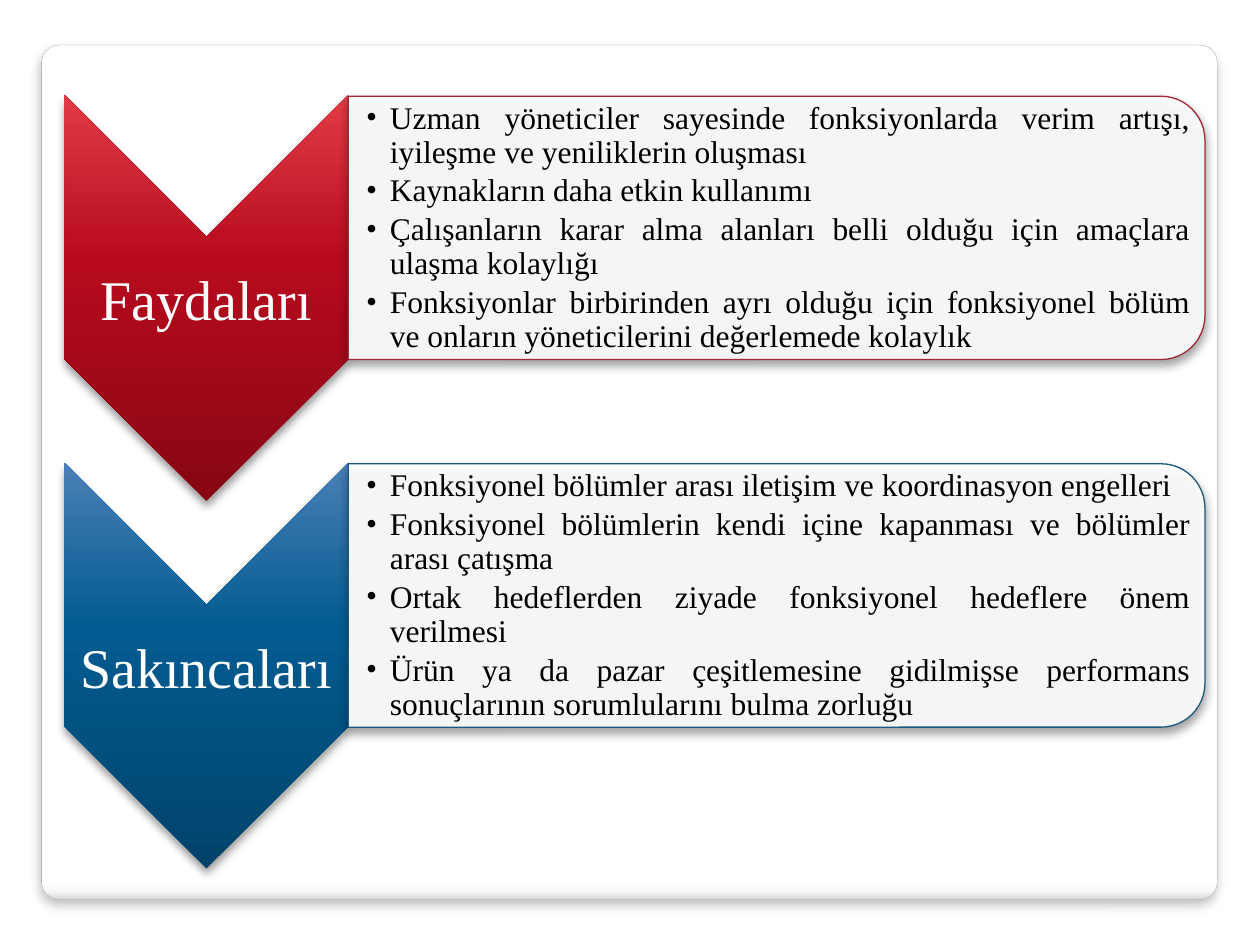
from dataclasses import dataclass

from lxml.etree import SubElement
from pptx import Presentation
from pptx.dml.color import RGBColor
from pptx.enum.shapes import MSO_SHAPE as Preset
from pptx.enum.text import MSO_ANCHOR as Anchor, PP_ALIGN as Align
from pptx.oxml.ns import qn
from pptx.util import Cm, Pt

FONT = "Times New Roman"
PITCH = 7.41


@dataclass(frozen=True)
class Area:
    left: float
    top: float
    width: float
    height: float

    def lowered(self, dy: float) -> "Area":
        return Area(self.left, self.top + dy, self.width, self.height)

    def turned(self) -> "Area":
        shift = (self.width - self.height) / 2
        return Area(self.left + shift, self.top - shift, self.height, self.width)

    def lengths(self) -> list:
        return [Cm(v) for v in (self.left, self.top, self.width, self.height)]


@dataclass(frozen=True)
class Shadow:
    opacity: int
    blur: float
    distance: float


@dataclass(frozen=True)
class Section:
    title: str
    points: tuple
    shades: tuple
    outline: str


FRAME = Area(0.84, 0.91, 23.7, 17.22)
CHEVRON = Area(1.3, 1.92, 5.72, 8.18)
TITLE = Area(1.3, 4.78, 5.72, 2.46)
PANEL = Area(7.02, 1.94, 17.27, 5.31)
POINTS = Area(7.02, 2.2, 17.01, 4.8)
SOFT = Shadow(25, 6, 4)
CRISP = Shadow(40, 5.2, 3)

SECTIONS = (
    Section("Faydaları", (
        "Uzman yöneticiler sayesinde fonksiyonlarda verim artışı, iyileşme ve yeniliklerin oluşması",
        "Kaynakların daha etkin kullanımı",
        "Çalışanların karar alma alanları belli olduğu için amaçlara ulaşma kolaylığı",
        "Fonksiyonlar birbirinden ayrı olduğu için fonksiyonel bölüm ve onların "
        "yöneticilerini değerlemede kolaylık",
    ), ((0, "870614"), (60, "B80B1E"), (100, "E13C45")), "9F2936"),
    Section("Sakıncaları", (
        "Fonksiyonel bölümler arası iletişim ve koordinasyon engelleri",
        "Fonksiyonel bölümlerin kendi içine kapanması ve bölümler arası çatışma",
        "Ortak hedeflerden ziyade fonksiyonel hedeflere önem verilmesi",
        "Ürün ya da pazar çeşitlemesine gidilmişse performans sonuçlarının "
        "sorumlularını bulma zorluğu",
    ), ((0, "00436A"), (60, "035C91"), (100, "4A80B7")), "1B587C"),
)


def rgb(code: str) -> RGBColor:
    return RGBColor.from_string(code)


def add_alpha(color, percent: int) -> None:
    SubElement(color, qn("a:alpha"), val=str(percent * 1000))


def fill_gradient(shape, stops: tuple, angle: int) -> None:
    shape.fill.gradient()
    gradient = shape._element.spPr.find(qn("a:gradFill"))
    gradient.set("rotWithShape", "0")
    for child in list(gradient):
        gradient.remove(child)
    stop_list = SubElement(gradient, qn("a:gsLst"))
    for position, code in stops:
        stop = SubElement(stop_list, qn("a:gs"), pos=str(position * 1000))
        SubElement(stop, qn("a:srgbClr"), val=code)
    SubElement(gradient, qn("a:lin"), ang=str(angle * 60000), scaled="0")


def add_block(slide, preset, area: Area, shadow: Shadow, *, stops: tuple = (), angle: int = 90,
              fill: str = "FFFFFF", opacity: int = 100, outline: str = "",
              weight: float = 0.75, turned: bool = False):
    """Draw a shape over the area it visibly covers, optionally turned by 90 degrees."""
    block = slide.shapes.add_shape(preset, *(area.turned() if turned else area).lengths())
    block.rotation = 90 if turned else 0
    if stops:
        fill_gradient(block, stops, angle)
    else:
        block.fill.solid()
        block.fill.fore_color.rgb = rgb(fill)
        add_alpha(block._element.spPr.find(qn("a:solidFill"))[0], opacity)
    if outline:
        block.line.color.rgb = rgb(outline)
        block.line.width = Pt(weight)
    else:
        block.line.fill.background()
    block.shadow.inherit = False
    outer = SubElement(block._element.spPr.find(qn("a:effectLst")), qn("a:outerShdw"),
                       blurRad=str(Pt(shadow.blur)), dist=str(Pt(shadow.distance)),
                       dir="5400000", rotWithShape="0")
    add_alpha(SubElement(outer, qn("a:srgbClr"), val="000000"), shadow.opacity)
    return block


def add_text(slide, area: Area, lines: tuple, *, size: float, color: str, align,
             margin: float = 0.05, left_margin: float = 0.05, spacing: float = 1.0,
             gap: float = 0, bullet: str = "", indent: float = 0) -> None:
    frame = slide.shapes.add_textbox(*area.lengths()).text_frame
    frame.word_wrap = True
    frame.vertical_anchor = Anchor.MIDDLE
    frame.margin_left = Cm(left_margin)
    frame.margin_top = frame.margin_right = frame.margin_bottom = Cm(margin)
    for index, line in enumerate(lines):
        paragraph = frame.paragraphs[0] if index == 0 else frame.add_paragraph()
        paragraph.alignment = align
        paragraph.line_spacing = spacing
        paragraph.space_after = Pt(gap)
        if bullet:
            properties = paragraph._p.get_or_add_pPr()
            properties.set("marL", str(Cm(indent)))
            properties.set("indent", str(-Cm(indent)))
            SubElement(properties, qn("a:buFont"), typeface=FONT)
            SubElement(properties, qn("a:buChar"), char=bullet)
        run = paragraph.add_run()
        run.text = line
        run.font.name, run.font.size = FONT, Pt(size)
        run.font.color.rgb = rgb(color)


def add_section(slide, section: Section, drop: float) -> None:
    add_block(slide, Preset.CHEVRON, CHEVRON.lowered(drop), CRISP, stops=section.shades,
              angle=270, turned=True)
    add_text(slide, TITLE.lowered(drop), (section.title,), size=32, color="FFFFFF",
             align=Align.CENTER)
    add_block(slide, Preset.ROUND_2_SAME_RECTANGLE, PANEL.lowered(drop), CRISP, opacity=90,
              outline=section.outline, turned=True)
    add_text(slide, POINTS.lowered(drop), section.points, size=18, color="000000",
             align=Align.JUSTIFY, margin=0.03, left_margin=0.36, spacing=0.9, gap=2.7,
             bullet="•", indent=0.48)


def main() -> None:
    deck = Presentation()
    deck.slide_width, deck.slide_height = Cm(25.4), Cm(19.05)
    slide = deck.slides.add_slide(deck.slide_layouts[6])
    frame = add_block(slide, Preset.ROUNDED_RECTANGLE, FRAME, SOFT, outline="A4A4A4", weight=0.16,
                      stops=((0, "FFFFFF"), (98, "FFFFFF"), (99, "F7F7F7"), (100, "DADADA")))
    frame.adjustments[0] = 0.02
    for row, section in enumerate(SECTIONS):
        add_section(slide, section, row * PITCH)
    deck.save("out.pptx")


if __name__ == "__main__":
    main()
